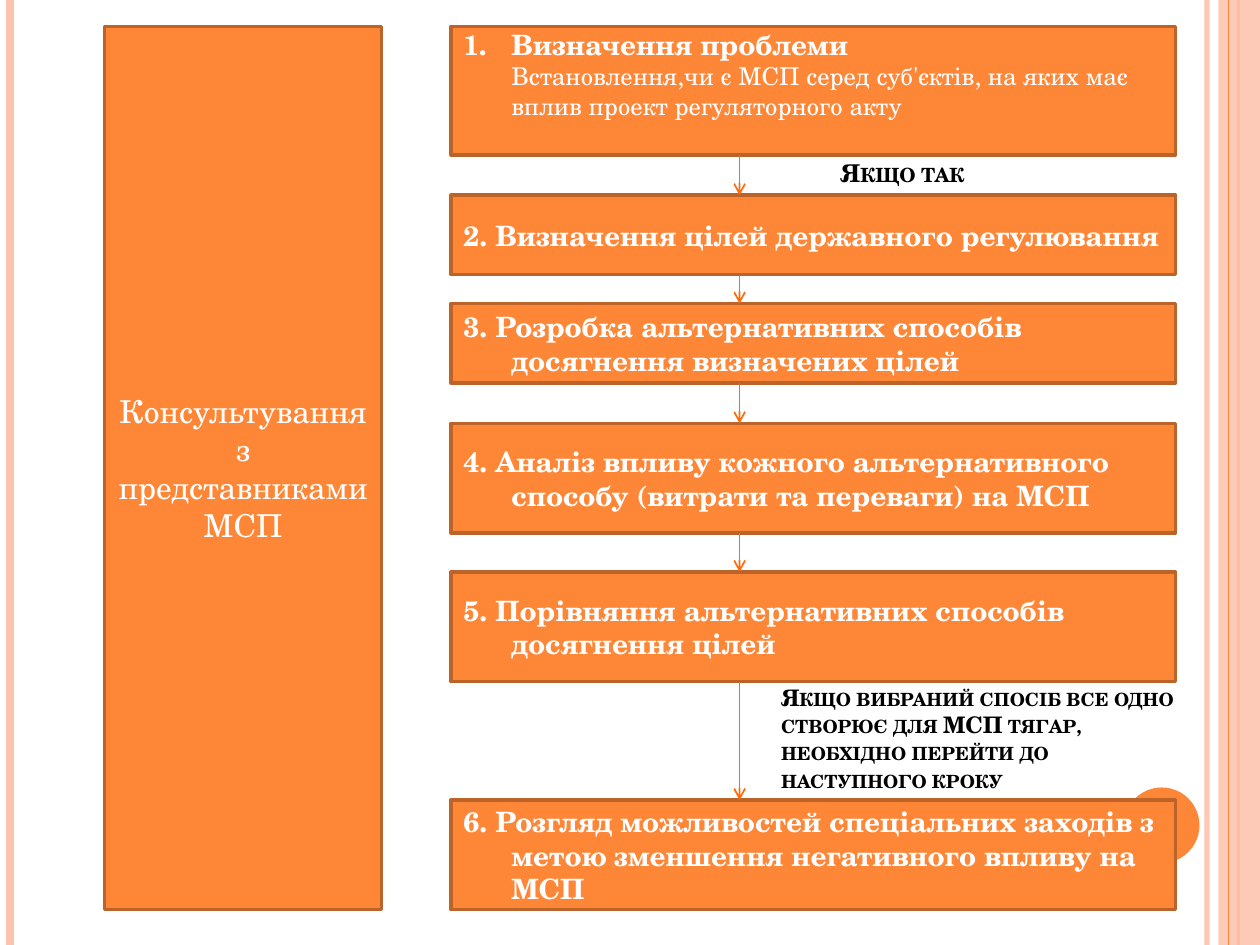
from dataclasses import dataclass
from itertools import pairwise

from lxml.etree import SubElement
from pptx import Presentation
from pptx.dml.color import RGBColor
from pptx.enum.shapes import MSO_CONNECTOR, MSO_SHAPE
from pptx.enum.text import MSO_ANCHOR, MSO_AUTO_SIZE, PP_ALIGN
from pptx.oxml.ns import qn
from pptx.util import Inches, Pt


@dataclass(frozen=True)
class Theme:
    font: str = "TeX Gyre Schola"
    accent: str = "FE8637"
    border: str = "BC6329"
    arrow: str = "FF6B0A"
    stripe: str = "FEC3AE"
    light: str = "FFFFFF"
    dark: str = "000000"
    panel_size: int = 18
    step_size: int = 16
    detail_size: int = 14
    title_size: int = 14
    note_size: int = 13


@dataclass(frozen=True)
class Box:
    left: float
    top: float
    width: float
    height: float

    @property
    def bottom(self) -> float:
        return self.top + self.height

    def lengths(self) -> tuple:
        return tuple(map(Inches, (self.left, self.top, self.width, self.height)))


@dataclass(frozen=True)
class Step:
    text: str
    top: float
    height: float
    detail: str = ""

    @property
    def box(self) -> Box:
        return Box(STEP_LEFT, self.top, STEP_WIDTH, self.height)


@dataclass(frozen=True)
class Stripe:
    x: float
    color: str
    weight: float
    opacity: int = 100


THEME = Theme()
SLIDE_WIDTH, SLIDE_HEIGHT = 10, 7.5
STEP_LEFT, STEP_WIDTH, STEP_INDENT = 3.58, 5.75, 0.38
ARROW_X = 5.87
PANEL = Box(0.83, 0.21, 2.2, 7.01)

STEPS = (
    Step("Визначення проблеми", 0.21, 1.02,
         "Встановлення,чи є МСП серед суб'єктів, на яких має вплив проект регуляторного акту"),
    Step("2. Визначення цілей державного регулювання", 1.55, 0.63),
    Step("3. Розробка альтернативних способів досягнення визначених цілей", 2.41, 0.63),
    Step("4. Аналіз впливу кожного альтернативного способу (витрати та переваги) на МСП",
         3.36, 0.87),
    Step("5. Порівняння альтернативних способів досягнення цілей", 4.54, 0.87),
    Step("6. Розгляд можливостей спеціальних заходів з метою зменшення негативного впливу на МСП",
         6.35, 0.87),
)
STRIPES = (
    Stripe(9.58, THEME.stripe, 3, 93),
    Stripe(0.08, THEME.stripe, 4.5),
    Stripe(9.83, THEME.accent, 1.5),
)
THIN_STRIPE = Stripe(9.75, THEME.accent, 0.75)


def set_opacity(part, percent: int) -> None:
    """Apply an opacity to the colours of a shape or line."""
    for color in part.element.spPr.iter(qn("a:srgbClr")):
        SubElement(color, qn("a:alpha")).set("val", str(percent * 1000))


def add_line(slide, x: float, top: float, bottom: float, color: str, weight: float):
    """Draw a vertical line without a shadow."""
    line = slide.shapes.add_connector(
        MSO_CONNECTOR.STRAIGHT, Inches(x), Inches(top), Inches(x), Inches(bottom))
    line.line.color.rgb = RGBColor.from_string(color)
    line.line.width = Pt(weight)
    SubElement(line.element.spPr, qn("a:effectLst"))
    return line


def add_stripe(slide, stripe: Stripe) -> None:
    """Draw a full-height decorative stripe."""
    line = add_line(slide, stripe.x, 0, SLIDE_HEIGHT, stripe.color, stripe.weight)
    if stripe.opacity < 100:
        set_opacity(line, stripe.opacity)


def add_arrow(slide, top: float, bottom: float) -> None:
    """Draw a downward arrow between two steps."""
    arrow = add_line(slide, ARROW_X, top, bottom, THEME.arrow, 1)
    outline = arrow.line.color and arrow.element.spPr.find(qn("a:ln"))
    SubElement(outline, qn("a:tailEnd")).set("type", "arrow")


def add_filled(slide, preset: MSO_SHAPE, box: Box, fill: str, border: str = ""):
    """Draw a filled shape with an optional border."""
    shape = slide.shapes.add_shape(preset, *box.lengths())
    shape.shadow.inherit = False
    shape.fill.solid()
    shape.fill.fore_color.rgb = RGBColor.from_string(fill)
    if border:
        shape.line.color.rgb = RGBColor.from_string(border)
        shape.line.width = Pt(2)
    else:
        shape.line.fill.background()
    return shape


def add_text(paragraph, text: str, size: int, color: str, bold: bool = False,
             align: PP_ALIGN = PP_ALIGN.LEFT):
    """Append a formatted run to a paragraph."""
    paragraph.alignment = align
    run = paragraph.add_run()
    run.text = text
    run.font.name = THEME.font
    run.font.size = Pt(size)
    run.font.bold = bold
    run.font.color.rgb = RGBColor.from_string(color)
    return run


def set_indent(paragraph, left: float, hanging: float = 0):
    """Indent a paragraph and return its properties element."""
    properties = paragraph._p.get_or_add_pPr()
    properties.set("marL", str(Inches(left)))
    properties.set("indent", str(-Inches(hanging)))
    return properties


def add_step(slide, step: Step) -> None:
    """Draw one step of the procedure."""
    frame = add_filled(
        slide, MSO_SHAPE.RECTANGLE, step.box, THEME.accent, THEME.border).text_frame
    frame.word_wrap = True
    frame.vertical_anchor = MSO_ANCHOR.MIDDLE
    heading = frame.paragraphs[0]
    properties = set_indent(heading, STEP_INDENT, STEP_INDENT)
    add_text(heading, step.text, THEME.step_size, THEME.light, bold=True)
    if step.detail:
        SubElement(properties, qn("a:buFont")).set("typeface", "+mj-lt")
        SubElement(properties, qn("a:buAutoNum")).set("type", "arabicPeriod")
        frame.vertical_anchor = MSO_ANCHOR.TOP
        frame.margin_top = Inches(0.01)
        detail = frame.add_paragraph()
        set_indent(detail, STEP_INDENT)
        add_text(detail, step.detail, THEME.detail_size, THEME.light)


def write_condition(holder, text: str, size: int) -> None:
    """Write a bold small-caps condition beside an arrow."""
    frame = holder.text_frame
    frame.word_wrap = True
    frame.auto_size = MSO_AUTO_SIZE.NONE
    frame.vertical_anchor = MSO_ANCHOR.BOTTOM
    run = add_text(frame.paragraphs[0], text, size, THEME.dark, bold=True)
    run._r.get_or_add_rPr().set("cap", "small")


def add_decor(slide) -> None:
    """Draw the stripes and the circle at the slide edges."""
    for stripe in STRIPES:
        add_stripe(slide, stripe)
    band = add_filled(slide, MSO_SHAPE.RECTANGLE,
                      Box(9.67, 0, SLIDE_WIDTH - 9.67, SLIDE_HEIGHT), THEME.stripe)
    set_opacity(band, 87)
    add_stripe(slide, THIN_STRIPE)
    add_filled(slide, MSO_SHAPE.OVAL, Box(8.92, 6.25, 0.6, 0.6), THEME.accent)


def main() -> None:
    """Build and save the slide."""
    deck = Presentation()
    deck.slide_width, deck.slide_height = Inches(SLIDE_WIDTH), Inches(SLIDE_HEIGHT)
    slide = deck.slides.add_slide(deck.slide_layouts[5])
    add_decor(slide)

    title = slide.shapes.title
    title.left, title.top, title.width, title.height = Box(6.57, 0.99, 1.26, 0.55).lengths()
    write_condition(title, "Якщо так", THEME.title_size)

    for step in STEPS:
        add_step(slide, step)
    for upper, lower in pairwise(STEPS):
        add_arrow(slide, upper.box.bottom, lower.top)

    note = slide.shapes.add_textbox(*Box(6.1, 5.4, 3.39, 0.94).lengths())
    write_condition(note, "Якщо вибраний спосіб все одно створює для МСП тягар, "
                    "необхідно перейти до наступного кроку", THEME.note_size)

    panel = add_filled(slide, MSO_SHAPE.RECTANGLE, PANEL, THEME.accent, THEME.border).text_frame
    panel.word_wrap = True
    panel.vertical_anchor = MSO_ANCHOR.MIDDLE
    add_text(panel.paragraphs[0], "Консультування з представниками МСП",
             THEME.panel_size, THEME.light, align=PP_ALIGN.CENTER)
    deck.save("out.pptx")


if __name__ == "__main__":
    main()
